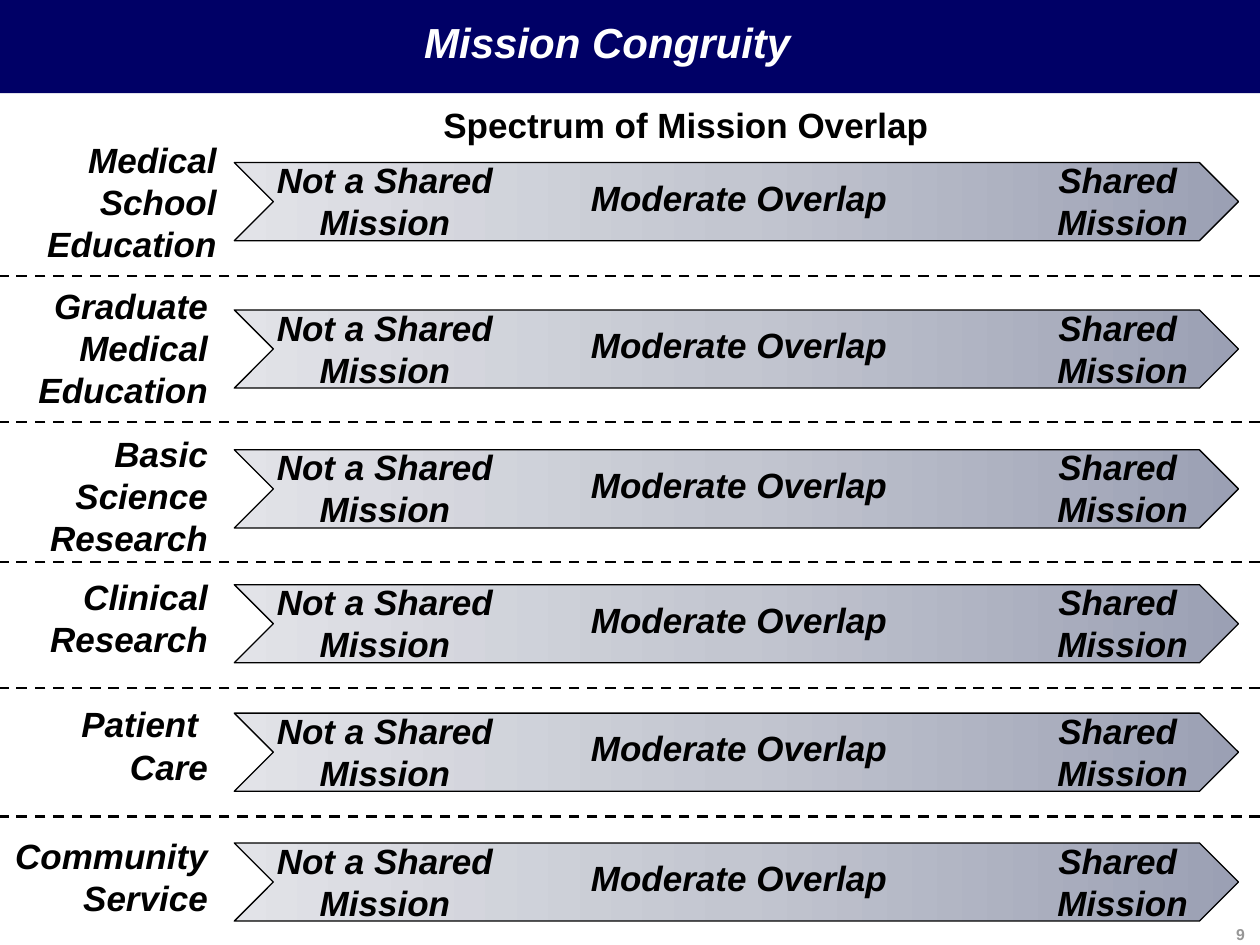
from copy import deepcopy
from dataclasses import dataclass

from pptx import Presentation
from pptx.dml.color import RGBColor
from pptx.enum.dml import MSO_LINE
from pptx.enum.shapes import MSO_CONNECTOR, MSO_SHAPE
from pptx.enum.text import MSO_ANCHOR, MSO_AUTO_SIZE, PP_ALIGN
from pptx.oxml.ns import qn
from pptx.util import Inches, Pt

TITLE = "Mission Congruity"
HEADING = "Spectrum of Mission Overlap"
PAGE = "9"

# mission, label top, label right edge, arrow top, divider below
MISSIONS = [
    ("Medical School Education", 1.05, 1.83, 1.29, 2.19),
    ("Graduate Medical Education", 2.21, 1.76, 2.46, 3.35),
    ("Basic Science Research", 3.38, 1.76, 3.57, 4.46),
    ("Clinical Research", 4.52, 1.76, 4.64, 5.46),
    ("Patient \vCare", 5.53, 1.76, 5.66, 6.48),
    ("Community Service", 6.57, 1.76, 6.69, None),
]
# degree of overlap, left, width, height, offset from arrow top
SPECTRUM = [
    ("Not a Shared Mission", 1.63, 2.85, 0.78, -0.08),
    ("Moderate Overlap", 4.19, 3.35, 0.44, 0.06),
    ("Shared \vMission", 8.03, 1.76, 0.78, -0.08),
]
SLIDE_W, SLIDE_H = 10, 7.5
BAND_H = 0.74
LABEL_W, LABEL_H = 1.82, 1.12
ARROW_LEFT, ARROW_W, ARROW_H = 1.86, 7.97, 0.62


@dataclass(frozen=True)
class Theme:
    font: str = "Arial"
    band: str = "000066"
    title: str = "FFFFFF"
    ink: str = "000000"
    page: str = "969696"
    spectrum: tuple = ((0, "9BA0B4"), (0.5, "C3C6D0"), (1, "E2E3E8"))
    title_size: int = 24
    body_size: int = 20
    page_size: int = 9


THEME = Theme()


def rgb(code):
    return RGBColor.from_string(code)


def write(shape, text, align, size=THEME.body_size, color=THEME.ink,
          italic=True, anchor=MSO_ANCHOR.TOP, insets=(0.11, 0.05)):
    frame = shape.text_frame
    frame.word_wrap = True
    frame.auto_size = MSO_AUTO_SIZE.NONE
    frame.vertical_anchor = anchor
    frame.margin_left = frame.margin_right = Inches(insets[0])
    frame.margin_top = frame.margin_bottom = Inches(insets[1])
    paragraph = frame.paragraphs[0]
    paragraph.text = text
    paragraph.alignment = align
    font = paragraph.font
    font.name, font.size = THEME.font, Pt(size)
    font.bold, font.italic = True, italic
    font.color.rgb = rgb(color)


def add_text(slide, box, text, align, **style):
    write(slide.shapes.add_textbox(*map(Inches, box)), text, align, **style)


def add_arrow(slide, top):
    arrow = slide.shapes.add_shape(
        MSO_SHAPE.CHEVRON,
        *map(Inches, (ARROW_LEFT, top, ARROW_W, ARROW_H)))
    arrow.shadow.inherit = False
    arrow.line.color.rgb = rgb(THEME.ink)
    arrow.line.width = Pt(0.75)
    arrow.fill.gradient()
    arrow.fill.gradient_angle = 180
    stop_list = arrow._element.spPr.find(qn("a:gradFill")).find(qn("a:gsLst"))
    stop_list.append(deepcopy(stop_list[0]))
    for stop, (position, color) in zip(arrow.fill.gradient_stops, THEME.spectrum):
        stop.position = position
        stop.color.rgb = rgb(color)


def add_divider(slide, y):
    divider = slide.shapes.add_connector(
        MSO_CONNECTOR.STRAIGHT, *map(Inches, (SLIDE_W, y, 0, y)))
    divider.line.color.rgb = rgb(THEME.ink)
    divider.line.width = Pt(1.5)
    divider.line.dash_style = MSO_LINE.DASH
    properties = divider._element.spPr
    properties.append(properties.makeelement(qn("a:effectLst"), {}))


def add_header(slide):
    band = slide.shapes.add_shape(
        MSO_SHAPE.RECTANGLE, 0, 0, Inches(SLIDE_W), Inches(BAND_H))
    band.shadow.inherit = False
    band.fill.solid()
    band.fill.fore_color.rgb = rgb(THEME.band)
    band.line.fill.background()
    title = slide.shapes.title
    band._element.addnext(title._element)  # title in front of the band
    title.left, title.top, title.width, title.height = map(
        Inches, (1.29, 0.13, 7.06, 0.4))
    write(title, TITLE, PP_ALIGN.CENTER, size=THEME.title_size,
          color=THEME.title, anchor=MSO_ANCHOR.MIDDLE, insets=(0, 0))


def main():
    deck = Presentation()
    deck.slide_width, deck.slide_height = Inches(SLIDE_W), Inches(SLIDE_H)
    slide = deck.slides.add_slide(deck.slide_layouts[5])
    add_header(slide)
    add_text(slide, (6.6, 7.34, 3.28, 0.15), PAGE, PP_ALIGN.RIGHT,
             size=THEME.page_size, color=THEME.page, italic=False,
             anchor=MSO_ANCHOR.MIDDLE, insets=(0, 0))
    add_text(slide, (1.66, 0.77, 7.57, 0.44), HEADING, PP_ALIGN.CENTER,
             italic=False)
    for mission, label_top, label_right, arrow_top, divider_y in MISSIONS:
        label_h = LABEL_H if mission.count(" ") == 2 else 0.78
        add_text(slide, (label_right - LABEL_W, label_top, LABEL_W, label_h),
                 mission, PP_ALIGN.RIGHT)
        add_arrow(slide, arrow_top)
        for degree, left, width, height, offset in SPECTRUM:
            add_text(slide, (left, arrow_top + offset, width, height),
                     degree, PP_ALIGN.CENTER)
        if divider_y:
            add_divider(slide, divider_y)
    deck.save("out.pptx")


if __name__ == "__main__":
    main()
